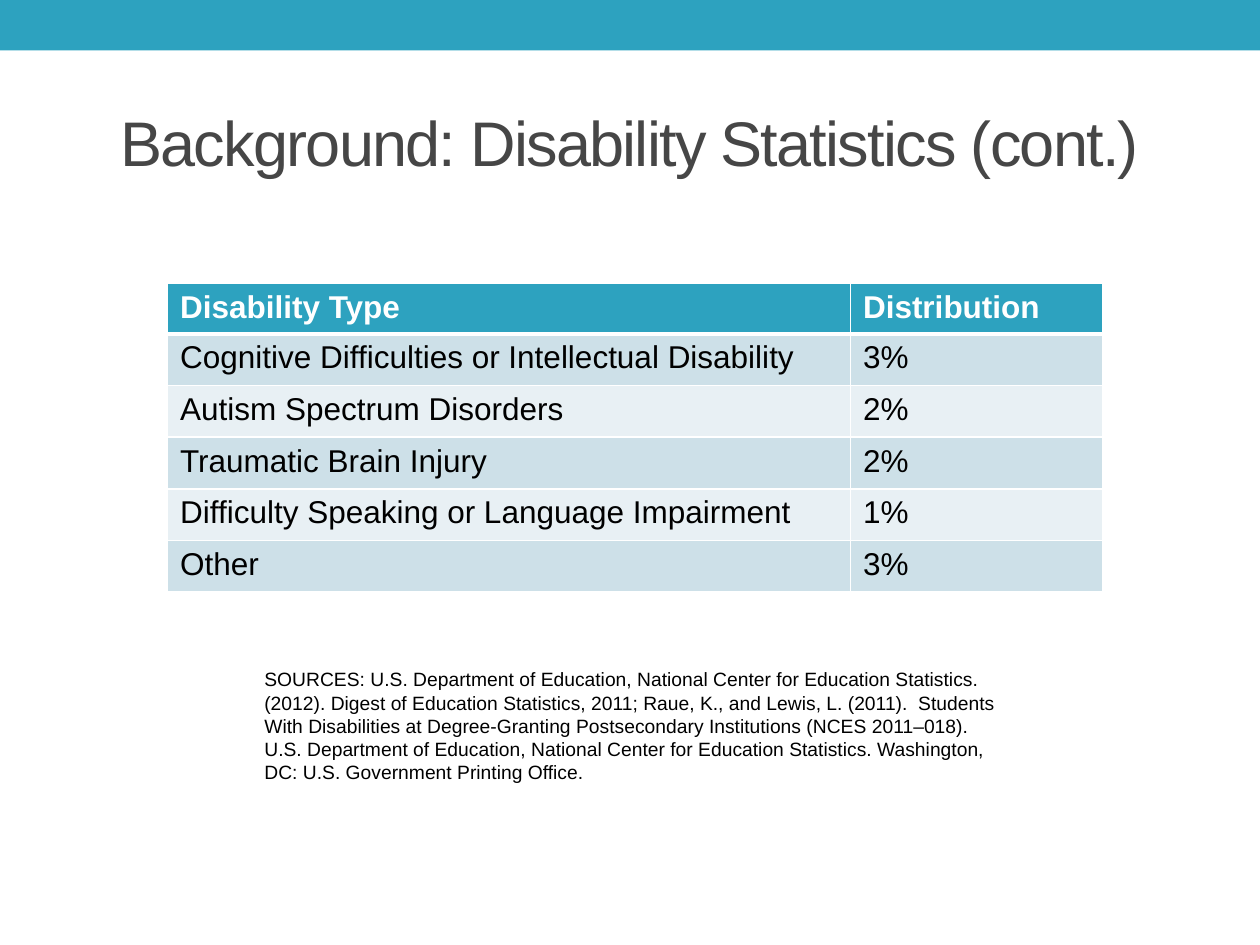
from typing import NamedTuple

from lxml import etree
from pptx import Presentation
from pptx.dml.color import RGBColor
from pptx.enum import shapes, text
from pptx.oxml import ns
from pptx.util import Inches, Pt

TEAL = RGBColor(0x2D, 0xA2, 0xBF)
GRAY = RGBColor(0x46, 0x46, 0x46)
BLACK = RGBColor(0, 0, 0)
WHITE = RGBColor(0xFF, 0xFF, 0xFF)
BANDS = (RGBColor(0xCD, 0xE0, 0xE8), RGBColor(0xE8, 0xF0, 0xF4))
FONT = "Arial"


class Entry(NamedTuple):
    disability: str
    share: str


HEADER = Entry("Disability Type", "Distribution")
ENTRIES = [
    Entry("Cognitive Difficulties or Intellectual Disability", "3%"),
    Entry("Autism Spectrum Disorders", "2%"),
    Entry("Traumatic Brain Injury", "2%"),
    Entry("Difficulty Speaking or Language Impairment", "1%"),
    Entry("Other", "3%"),
]
SOURCES = (
    "SOURCES: U.S. Department of Education, National Center for Education "
    "Statistics. (2012). Digest of Education Statistics, 2011; Raue, K., and "
    "Lewis, L. (2011).  Students With Disabilities at Degree-Granting "
    "Postsecondary Institutions (NCES 2011–018).  U.S. Department of Education, "
    "National Center for Education Statistics. Washington, DC: U.S. Government "
    "Printing Office."
)


def style(para, size: float, color: RGBColor, bold: bool = False) -> None:
    para.font.name = FONT
    para.font.size = Pt(size)
    para.font.bold = bold
    para.font.color.rgb = color


def add_text(page, words: str, left: float, top: float, width: float,
             height: float, size: float, color: RGBColor):
    box = page.shapes.add_textbox(Inches(left), Inches(top), Inches(width), Inches(height))
    box.text_frame.word_wrap = True
    para = box.text_frame.paragraphs[0]
    para.text = words
    style(para, size, color)
    return box


def set_borders(cell, bottom: float = 1, top: float = 1) -> None:
    """Draw white cell borders, before the cell's fill in the XML."""
    props = cell._tc.get_or_add_tcPr()
    widths = {"lnL": 1, "lnR": 1, "lnT": top, "lnB": bottom}
    for index, (side, width) in enumerate(widths.items()):
        line = etree.Element(ns.qn(f"a:{side}"), w=str(Pt(width)))
        fill = etree.SubElement(line, ns.qn("a:solidFill"))
        etree.SubElement(fill, ns.qn("a:srgbClr"), val=str(WHITE))
        props.insert(index, line)


def add_statistics(page) -> None:
    rows = [HEADER, *ENTRIES]
    frame = page.shapes.add_table(len(rows), 2, Inches(1.33), Inches(2.25),
                                  Inches(7.42), Inches(2.43))
    table = frame.table
    for column, width in zip(table.columns, (5.42, 2)):
        column.width = Inches(width)
    for index, entry in enumerate(rows):
        is_header = index == 0
        table.rows[index].height = Inches(0.38 if is_header else 0.41)
        for cell, words in zip(table.rows[index].cells, entry):
            cell.fill.solid()
            cell.fill.fore_color.rgb = TEAL if is_header else BANDS[(index - 1) % 2]
            set_borders(cell, bottom=3 if is_header else 1, top=3 if index == 1 else 1)
            para = cell.text_frame.paragraphs[0]
            para.text = words
            style(para, 18, WHITE if is_header else BLACK, bold=is_header)


def main() -> None:
    deck = Presentation()
    deck.slide_width, deck.slide_height = Inches(10), Inches(7.5)
    page = deck.slides.add_slide(deck.slide_layouts[6])

    banner = page.shapes.add_shape(shapes.MSO_SHAPE.RECTANGLE, 0, 0,
                                   deck.slide_width, Inches(0.4))
    banner.shadow.inherit = False
    banner.fill.solid()
    banner.fill.fore_color.rgb = TEAL
    banner.line.fill.background()

    title = add_text(page, "Background: Disability Statistics (cont.)",
                     0.5, 0.58, 9, 1.08, 36, GRAY)
    title.text_frame.vertical_anchor = text.MSO_ANCHOR.MIDDLE
    heading = title.text_frame.paragraphs[0]
    heading.alignment = text.PP_ALIGN.CENTER
    heading.runs[0].font._element.set("spc", "-100")

    add_statistics(page)
    sources = add_text(page, SOURCES, 2, 5.25, 6.17, 1.03, 11, BLACK)
    sources.text_frame.auto_size = text.MSO_AUTO_SIZE.SHAPE_TO_FIT_TEXT
    deck.save("out.pptx")


if __name__ == "__main__":
    main()
